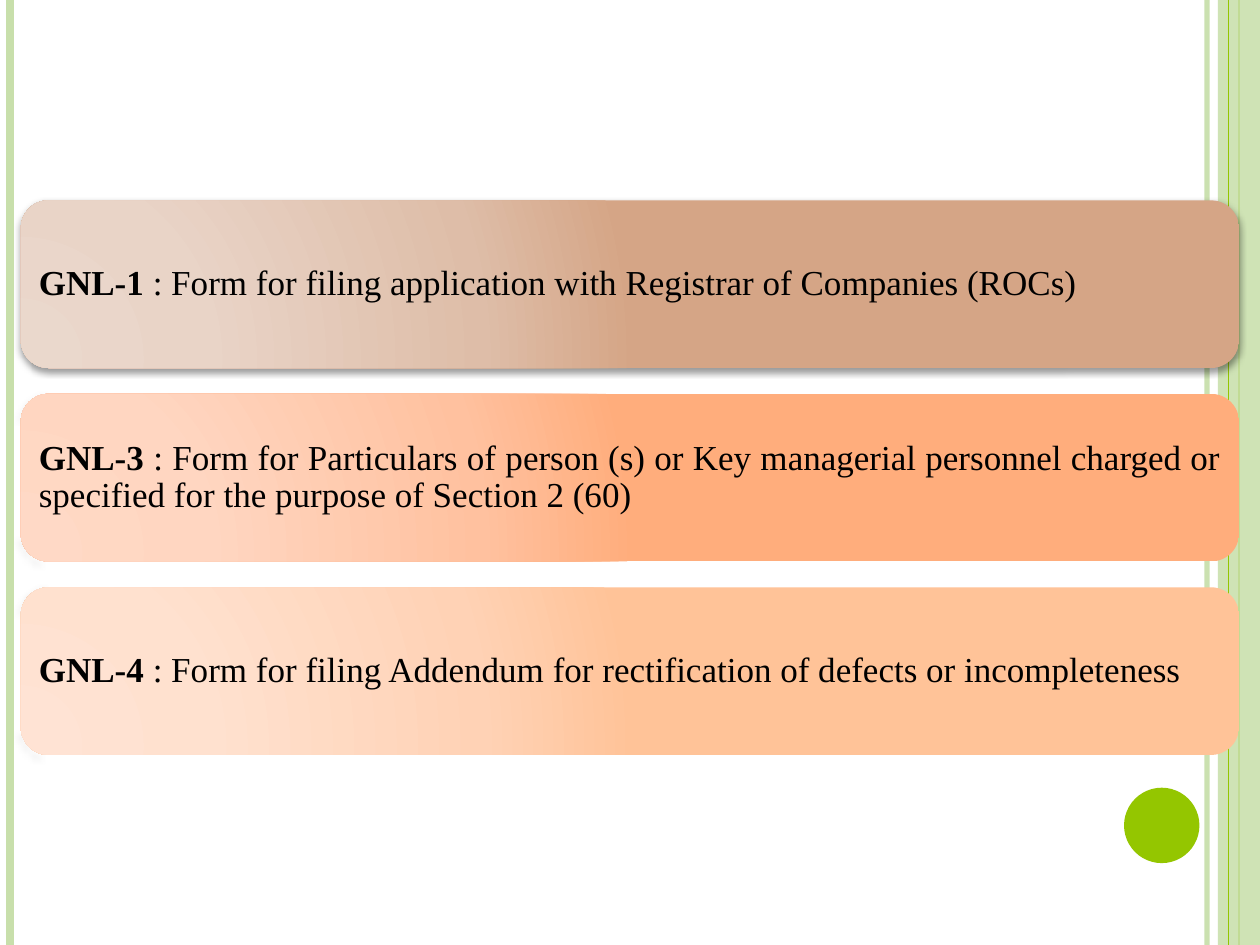
from lxml import etree
from pptx import Presentation
from pptx import util as u
from pptx.dml.color import RGBColor
from pptx.enum import shapes, text
from pptx.oxml import parse_xml
from pptx.oxml.ns import nsdecls, qn

PALE = RGBColor(0xC8, 0xDF, 0xAB)
GREEN = RGBColor(0x94, 0xC6, 0x00)
BLACK = RGBColor(0, 0, 0)
FONT = "Times New Roman"
HIGH = 19.05
STOPS = (0, 30, 75, 100)
SAND = ("EAD8CC", "E9D4C7", "DEBDA8", "D5A586")
CORAL = ("FFD9C6", "FFD6C1", "FFC19F", "FFAD7C")
PEACH = ("FFE3D4", "FFE1CF", "FFD2B5", "FFC398")
LEFT = text.PP_ALIGN.LEFT
FULL = text.PP_ALIGN.JUSTIFY
FORMS = (
    ("GNL-1", " : Form for filing application with Registrar of Companies (ROCs)", SAND, LEFT),
    ("GNL-3", " : Form for Particulars of person (s) or Key managerial personnel charged or "
     "specified for the purpose of Section 2 (60)", CORAL, FULL),
    ("GNL-4", " : Form for filing Addendum for rectification of defects or incompleteness", PEACH, LEFT),
)


def fade(fill, alpha):
    color = fill._xPr.find(".//" + qn("a:srgbClr"))
    etree.SubElement(color, qn("a:alpha"), val=str(alpha * 1000))


def add_line(slide, x, color, width, alpha=100):
    line = slide.shapes.add_connector(
        shapes.MSO_CONNECTOR.STRAIGHT, u.Cm(x), 0, u.Cm(x), u.Cm(HIGH))
    line.line.color.rgb = color
    line.line.width = u.Pt(width)
    if alpha < 100:
        fade(line.line.fill, alpha)
    etree.SubElement(line._element.spPr, qn("a:effectLst"))


def add_shape(slide, kind, x, y, w, h):
    shape = slide.shapes.add_shape(kind, u.Cm(x), u.Cm(y), u.Cm(w), u.Cm(h))
    shape.shadow.inherit = False
    shape.line.fill.background()
    return shape


def add_block(slide, kind, x, y, w, h, color, alpha=100):
    shape = add_shape(slide, kind, x, y, w, h)
    shape.fill.solid()
    shape.fill.fore_color.rgb = color
    if alpha < 100:
        fade(shape.fill, alpha)


def shade(shape, colors):
    stops = "".join(
        f'<a:gs pos="{pos * 1000}"><a:srgbClr val="{color}"/></a:gs>'
        for pos, color in zip(STOPS, colors))
    props = shape._element.spPr
    props.find(qn("a:prstGeom")).addnext(parse_xml(
        f'<a:gradFill {nsdecls("a")} rotWithShape="1"><a:gsLst>{stops}</a:gsLst>'
        '<a:path path="circle"><a:fillToRect l="5000" t="100000" r="120000" b="10000"/>'
        '</a:path></a:gradFill>'))
    props.find(qn("a:effectLst")).append(parse_xml(
        f'<a:outerShdw {nsdecls("a")} blurRad="{u.Pt(4)}" dist="{u.Pt(2)}" dir="5400000" '
        'rotWithShape="0"><a:srgbClr val="000000"><a:alpha val="40000"/></a:srgbClr>'
        '</a:outerShdw>'))


def add_card(slide, y, code, label, colors, align):
    card = add_shape(slide, shapes.MSO_SHAPE.ROUNDED_RECTANGLE, 0.42, y, 24.56, 3.38)
    shade(card, colors)
    frame = card.text_frame
    frame.word_wrap = True
    frame.vertical_anchor = text.MSO_ANCHOR.MIDDLE
    frame.margin_left = frame.margin_right = u.Cm(0.2)
    frame.margin_top = frame.margin_bottom = u.Cm(0.2)
    para = frame.paragraphs[0]
    para.alignment = align
    para.line_spacing = 0.9
    para.font.name = FONT
    para.font.size = u.Pt(20)
    para.font.color.rgb = BLACK
    head = para.add_run()
    head.text = code
    head.font.bold = True
    para.add_run().text = label


def main():
    deck = Presentation()
    deck.slide_width, deck.slide_height = u.Cm(25.4), u.Cm(HIGH)
    slide = deck.slides.add_slide(deck.slide_layouts[6])
    add_line(slide, 24.33, PALE, 3, 93)
    add_line(slide, 0.21, PALE, 4.5)
    add_line(slide, 24.98, GREEN, 1.5)
    add_block(slide, shapes.MSO_SHAPE.RECTANGLE, 24.55, 0, 0.85, HIGH, PALE, 87)
    add_line(slide, 24.76, GREEN, 0.75)
    add_block(slide, shapes.MSO_SHAPE.OVAL, 22.66, 15.88, 1.52, 1.52, GREEN)
    for row, form in enumerate(FORMS):
        add_card(slide, 4.04 + 3.9 * row, *form)
    deck.save("out.pptx")


if __name__ == "__main__":
    main()
